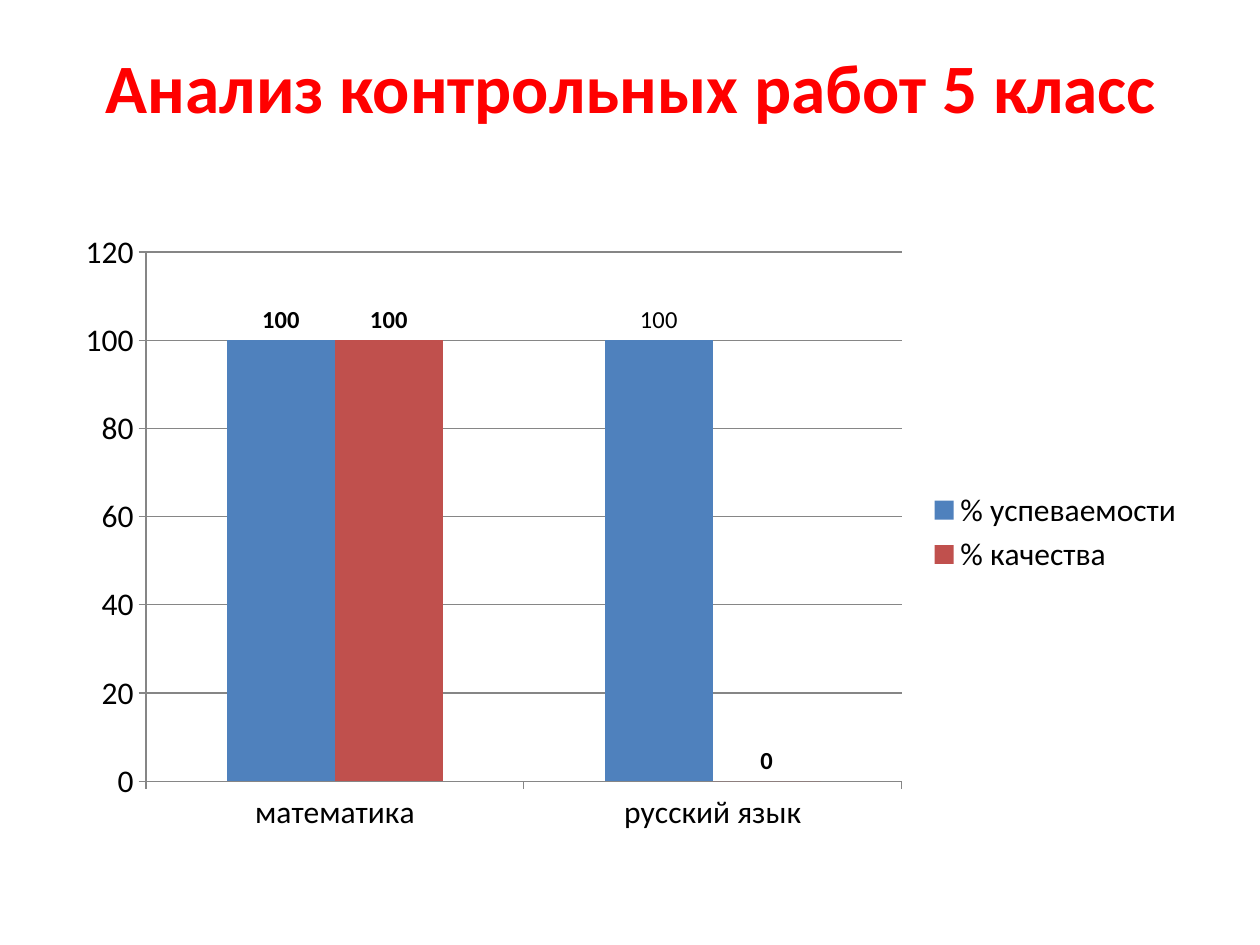
from pptx import Presentation
from pptx import util as u
from pptx.chart.data import CategoryChartData
from pptx.dml.color import RGBColor
from pptx.enum import chart as ch, text

RED = RGBColor(0xFF, 0x00, 0x00)
BLACK = RGBColor(0x00, 0x00, 0x00)
GREY = RGBColor(0x86, 0x86, 0x86)
BLUE = RGBColor(0x4F, 0x81, 0xBD)
BRICK = RGBColor(0xC0, 0x50, 0x4D)
FACE = "Calibri"


def style(font, size=18, color=BLACK, bold=False):
    font.name = FACE
    font.size = u.Pt(size)
    font.bold = bold
    font.color.rgb = color


def write(frame, words, align=text.PP_ALIGN.CENTER, **form):
    para = frame.paragraphs[0]
    para.alignment = align
    run = para.add_run()
    run.text = words
    style(run.font, **form)


deck = Presentation()
deck.slide_width = u.Inches(10)
deck.slide_height = u.Inches(7.5)
slide = deck.slides.add_slide(deck.slide_layouts[5])

title = slide.shapes.title
title.left, title.top = u.Inches(0.51), u.Inches(0.21)
title.width, title.height = u.Inches(9), u.Inches(0.94)
title.text_frame.word_wrap = True
title.text_frame.vertical_anchor = text.MSO_ANCHOR.MIDDLE
write(title.text_frame, "Анализ контрольных работ 5 класс", size=39.6, color=RED, bold=True)

data = CategoryChartData(number_format="General")
data.categories = ["математика", "русский язык"]
data.add_series("% успеваемости", [100, 100])
data.add_series("% качества ", [100, 0])
chart = slide.shapes.add_chart(
    ch.XL_CHART_TYPE.COLUMN_CLUSTERED,
    u.Inches(0.5), u.Inches(1.75), u.Inches(9), u.Inches(4.95), data).chart
style(chart.font)
chart.has_title = False
chart.has_legend = True
chart.legend.position = ch.XL_LEGEND_POSITION.RIGHT
chart.legend.include_in_layout = False

for axis in (chart.category_axis, chart.value_axis):
    axis.major_tick_mark = ch.XL_TICK_MARK.OUTSIDE
    axis.minor_tick_mark = ch.XL_TICK_MARK.NONE
    axis.format.line.color.rgb = GREY
scale = chart.value_axis
scale.minimum_scale, scale.maximum_scale, scale.major_unit = 0, 120, 20
scale.has_major_gridlines = True
scale.major_gridlines.format.line.color.rgb = GREY

plot = chart.plots[0]
plot.gap_width = 150
plot.overlap = 0
plot.vary_by_categories = False
for bars, color, bold in zip(plot.series, (BLUE, BRICK), (False, True)):
    bars.format.fill.solid()
    bars.format.fill.fore_color.rgb = color
    bars.invert_if_negative = False
    tags = bars.data_labels
    tags.show_value = True
    tags.position = ch.XL_LABEL_POSITION.OUTSIDE_END
    style(tags.font, size=14, bold=bold)
    first = bars.points[0].data_label
    style(first.font, size=14, bold=True)
    first.position = ch.XL_LABEL_POSITION.OUTSIDE_END

deck.save("out.pptx")
